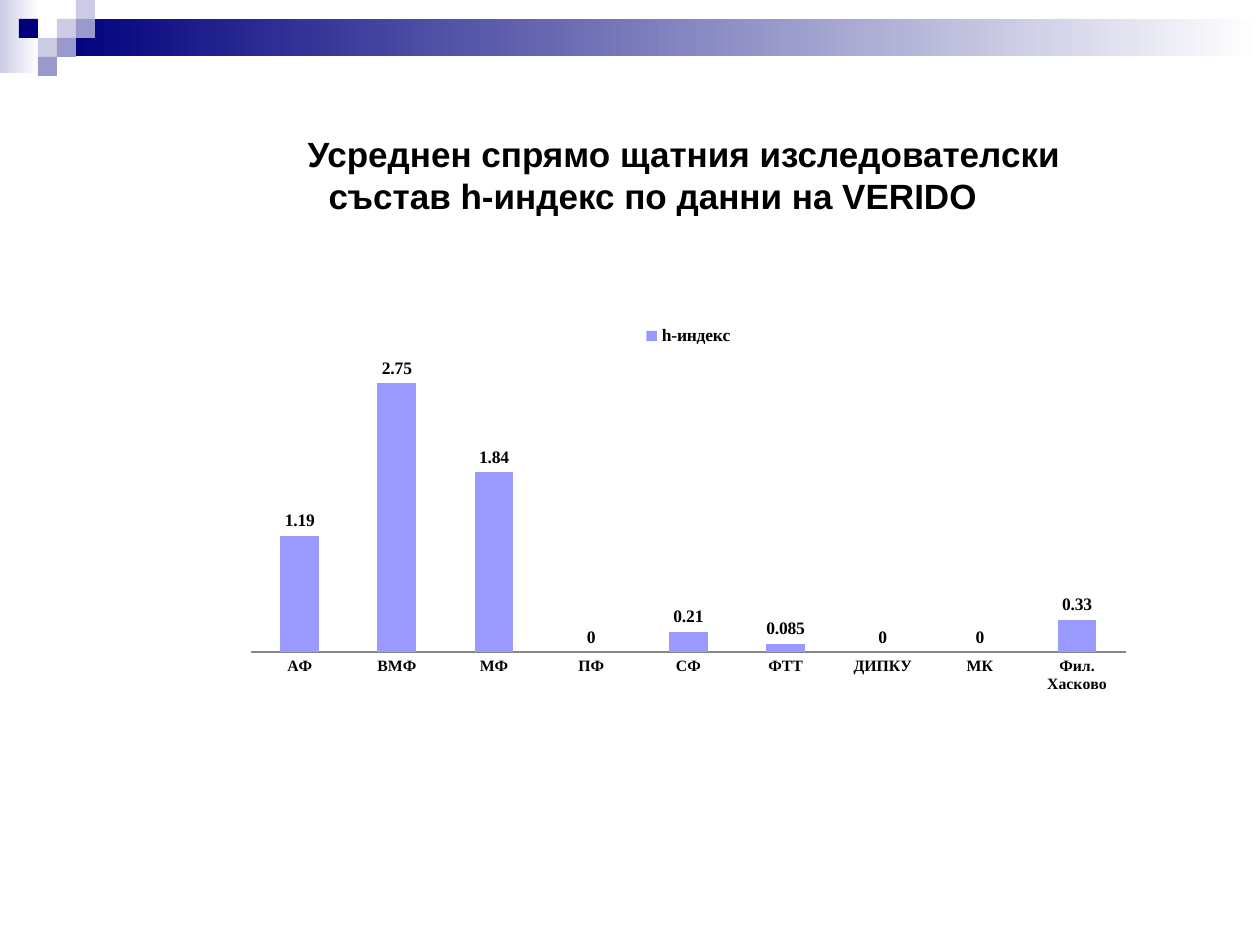
import dataclasses

import lxml.etree
import pptx
import pptx.chart.data
import pptx.dml.color
import pptx.enum.chart
import pptx.enum.shapes
import pptx.enum.text
import pptx.oxml
import pptx.oxml.ns
import pptx.util

RGBColor = pptx.dml.color.RGBColor
NAVY = RGBColor(0x00, 0x00, 0x7D)
LILAC = RGBColor(0xCC, 0xCC, 0xE6)
MAUVE = RGBColor(0x99, 0x99, 0xCC)
BAR = RGBColor(0x99, 0x99, 0xFF)
AXIS = RGBColor(0x86, 0x86, 0x86)
WHITE = RGBColor(0xFF, 0xFF, 0xFF)
BLACK = RGBColor(0x00, 0x00, 0x00)

PX_PER_INCH = 126
CELL = 19
TITLE = "Усреднен спрямо щатния изследователски състав h-индекс по данни на VERIDO"
H_INDEX = {
    "АФ": 1.19, "ВМФ": 2.75, "МФ": 1.84, "ПФ": 0, "СФ": 0.21,
    "ФТТ": 0.085, "ДИПКУ": 0, "МК": 0, "Фил. Xaсково": 0.33,
}


@dataclasses.dataclass(frozen=True)
class Band:
    left: int
    top: int
    width: int
    height: int
    color: RGBColor


@dataclasses.dataclass(frozen=True)
class Square:
    col: int
    row: int
    color: RGBColor


BANDS = [Band(0, 0, 39, 73, LILAC), Band(57, 19, 1203, 37, NAVY)]
SQUARES = [
    Square(3, 1, LILAC), Square(4, 0, LILAC), Square(4, 1, MAUVE),
    Square(2, 2, LILAC), Square(1, 1, NAVY), Square(3, 2, MAUVE),
    Square(2, 3, MAUVE),
]


def px(n: int) -> pptx.util.Emu:
    return pptx.util.Emu(round(n * 914400 / PX_PER_INCH))


def add_rect(slide, left: int, top: int, width: int, height: int):
    sp = slide.shapes.add_shape(
        pptx.enum.shapes.MSO_SHAPE.RECTANGLE,
        px(left), px(top), px(width), px(height))
    sp.shadow.inherit = False
    sp.line.fill.background()
    return sp


def draw_band(slide, band: Band) -> None:
    sp = add_rect(slide, band.left, band.top, band.width, band.height)
    sp.fill.gradient()
    sp.fill.gradient_angle = 0
    for stop, color in zip(sp.fill.gradient_stops, (band.color, WHITE)):
        stop.color.rgb = color


def draw_square(slide, square: Square) -> None:
    sp = add_rect(slide, square.col * CELL, square.row * CELL, CELL, CELL)
    sp.fill.solid()
    sp.fill.fore_color.rgb = square.color


def style_font(font, size: int, name: str, bold: bool = True) -> None:
    font.size = pptx.util.Pt(size)
    font.name = name
    font.bold = bold
    font.color.rgb = BLACK


def set_plot_layout(chart, x: float, y: float, w: float, h: float) -> None:
    qn = pptx.oxml.ns.qn
    plot_area = chart._chartSpace.find(".//" + qn("c:plotArea"))
    for old in plot_area.findall(qn("c:layout")):
        plot_area.remove(old)
    layout = lxml.etree.Element(qn("c:layout"))
    manual = lxml.etree.SubElement(layout, qn("c:manualLayout"))
    settings = {"layoutTarget": "inner", "xMode": "edge", "yMode": "edge",
                "x": x, "y": y, "w": w, "h": h}
    for tag, val in settings.items():
        lxml.etree.SubElement(manual, qn("c:" + tag), val=str(val))
    plot_area.insert(0, layout)


def draw_chart(slide) -> None:
    data = pptx.chart.data.CategoryChartData()
    data.categories = list(H_INDEX)
    data.add_series("h-индекс", list(H_INDEX.values()))
    chart = slide.shapes.add_chart(
        pptx.enum.chart.XL_CHART_TYPE.COLUMN_CLUSTERED,
        px(233), px(312), px(911), px(391), data).chart
    style_font(chart.font, 10, "Times New Roman", bold=False)
    chart.has_title = False
    chart.has_legend = True
    chart.legend.position = pptx.enum.chart.XL_LEGEND_POSITION.TOP
    chart.legend.include_in_layout = False
    style_font(chart.legend.font, 10, "Times New Roman")

    axis = chart.category_axis
    axis.major_tick_mark = pptx.enum.chart.XL_TICK_MARK.NONE
    axis.format.line.color.rgb = AXIS
    axis.format.line.width = pptx.util.Pt(0.75)
    style_font(axis.tick_labels.font, 9, "Times New Roman")
    chart.value_axis.visible = False
    chart.value_axis.has_major_gridlines = False
    chart.value_axis.minimum_scale = 0
    chart.value_axis.maximum_scale = 3

    plot = chart.plots[0]
    plot.gap_width = 150
    plot.vary_by_categories = False
    series = plot.series[0]
    series.format.fill.solid()
    series.format.fill.fore_color.rgb = BAR
    labels = series.data_labels
    labels.show_value = True
    labels.number_format = "General"
    labels.number_format_is_linked = False
    labels.position = pptx.enum.chart.XL_LABEL_POSITION.OUTSIDE_END
    style_font(labels.font, 10, "Times New Roman")
    set_plot_layout(chart, 0.02, 0.12, 0.96, 0.75)


def draw_title(slide) -> None:
    tf = slide.shapes.add_textbox(px(233), px(126), px(840), px(97)).text_frame
    tf.word_wrap = True
    tf.auto_size = pptx.enum.text.MSO_AUTO_SIZE.SHAPE_TO_FIT_TEXT
    p = tf.paragraphs[0]
    p.text = TITLE
    p.alignment = pptx.enum.text.PP_ALIGN.CENTER
    p.space_before = pptx.util.Pt(18)
    p._p.get_or_add_pPr().set("indent", str(px(62)))
    style_font(p.runs[0].font, 20, "Arial")


def main() -> None:
    prs = pptx.Presentation()
    prs.slide_width = px(1260)
    prs.slide_height = px(945)
    slide = prs.slides.add_slide(prs.slide_layouts[6])
    for band in BANDS:
        draw_band(slide, band)
    for square in SQUARES:
        draw_square(slide, square)
    draw_chart(slide)
    draw_title(slide)
    prs.save("out.pptx")


if __name__ == "__main__":
    main()
